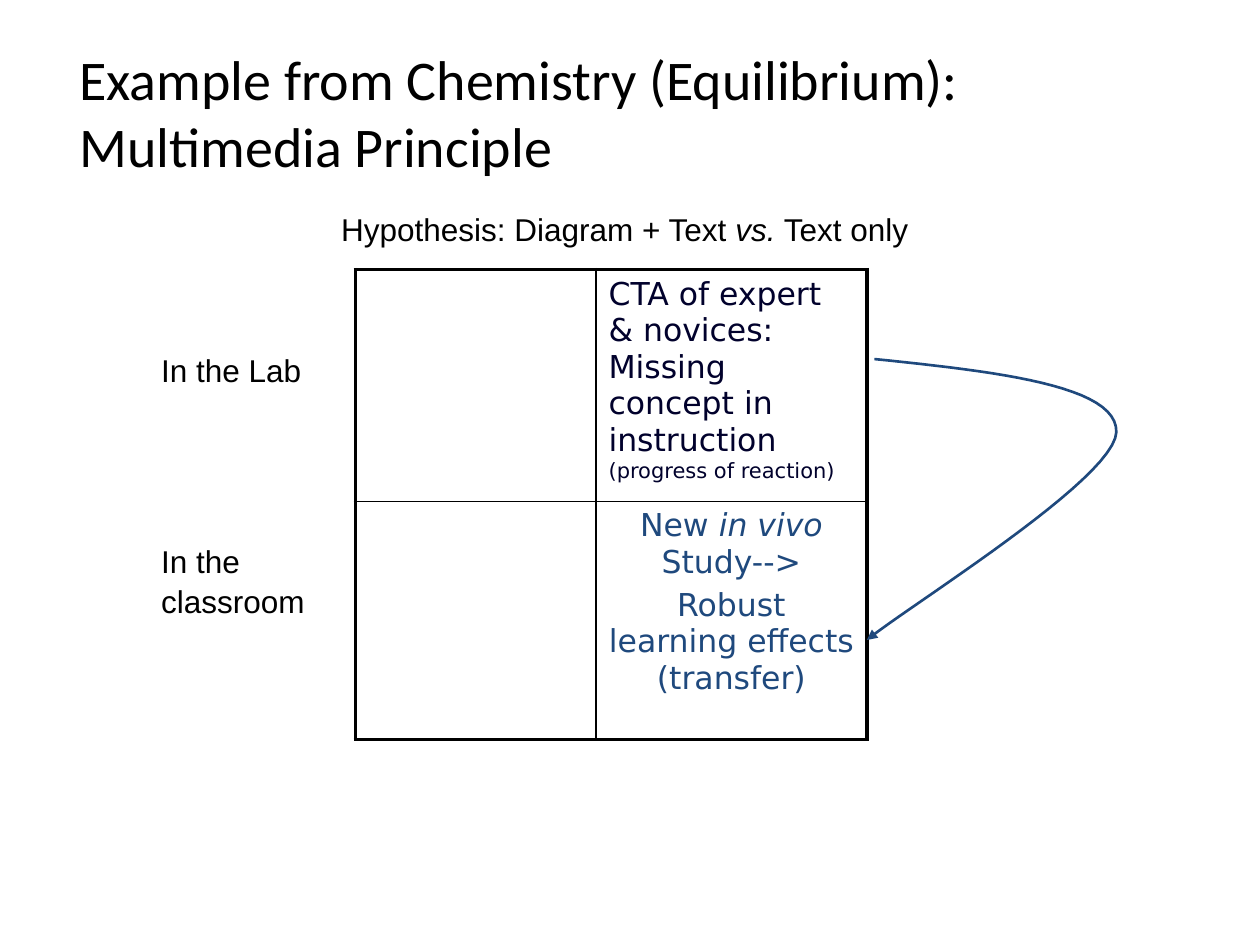
"""Build the slide on the multimedia principle in chemistry."""
from dataclasses import dataclass
from typing import NamedTuple

from lxml.etree import SubElement as Sub
from pptx import Presentation as Deck
from pptx.dml.color import RGBColor as Rgb
from pptx.enum.text import MSO_ANCHOR as Anchor, PP_ALIGN as Align
from pptx.oxml.ns import qn
from pptx.util import Inches, Pt


@dataclass(frozen=True)
class Theme:
    black: str = "000000"
    navy: str = "01012C"
    blue: str = "1F497D"
    head: str = "Calibri"
    body: str = "Arial"
    cell: str = "DejaVu Sans"
    big: float = 32
    mid: float = 18
    small: float = 12
    thick: float = 2.25
    thin: float = 1
    curve: float = 1.5


T = Theme()


class Run(NamedTuple):
    text: str
    size: float = T.mid
    slant: bool = False


class Para(NamedTuple):
    runs: list[Run]
    gap: float = 0
    align: Align = Align.LEFT
    lead: float = 1


class Note(NamedTuple):
    box: tuple[float, float, float, float]
    paras: list[Para]
    font: str = T.body
    anchor: Anchor = Anchor.TOP


class Cell(NamedTuple):
    row: int
    col: int
    color: str
    paras: list[Para]


class Spot(NamedTuple):
    x: float
    y: float


NOTES = [
    Note((0.53, 0.26, 9.11, 1.25),
         [Para([Run("Example from Chemistry (Equilibrium): \nMultimedia Principle", T.big)])],
         T.head, Anchor.MIDDLE),
    Note((1.18, 2.74, 1.72, 2.43),
         [Para([Run("In the Lab")]),
          Para([Run("In the classroom")], gap=86.5, lead=1.05)]),
    Note((2.61, 1.62, 5.32, 0.43),
         [Para([Run("Hypothesis: Diagram + Text "), Run("vs.", slant=True),
                Run(" Text only")])]),
]
GRID = (2.82, 2.14)
COLS = (1.91, 2.15)
ROWS = (1.84, 1.89)
GAP = T.mid * 0.2
CELLS = [
    Cell(0, 1, T.navy,
         [Para([Run("CTA of expert & novices: Missing concept in instruction "),
                Run("(progress of reaction)", T.small)], GAP)]),
    Cell(1, 1, T.blue,
         [Para([Run("New "), Run("in vivo", slant=True), Run(" Study-->")],
               GAP, Align.CENTER),
          Para([Run("Robust learning effects (transfer)")], GAP, Align.CENTER)]),
]
BENDS = [
    (Spot(6.94, 2.85), Spot(7.91, 2.95), Spot(8.87, 3.06), Spot(8.86, 3.43)),
    (Spot(8.86, 3.43), Spot(8.85, 3.8), Spot(7.21, 4.81), Spot(6.88, 5.08)),
]
STEPS = 24


def write(frame, paras: list[Para], font: str, color: str) -> None:
    for i, para in enumerate(paras):
        p = frame.add_paragraph() if i else frame.paragraphs[0]
        p.alignment = para.align
        p.space_before = Pt(para.gap)
        p.line_spacing = para.lead
        for run in para.runs:
            for n, line in enumerate(run.text.split("\n")):
                if n:
                    p.add_line_break()
                r = p.add_run()
                r.text = line
                r.font.name = font
                r.font.size = Pt(run.size)
                r.font.italic = run.slant
                r.font.color.rgb = Rgb.from_string(color)


def draw_note(slide, note: Note) -> None:
    frame = slide.shapes.add_textbox(*map(Inches, note.box)).text_frame
    frame.word_wrap = True
    frame.vertical_anchor = note.anchor
    write(frame, note.paras, note.font, T.black)


def edge(cell, side: str, width: float) -> None:
    line = Sub(cell._tc.get_or_add_tcPr(), qn(f"a:ln{side}"), w=str(Pt(width)))
    fill = Sub(line, qn("a:solidFill"))
    Sub(fill, qn("a:srgbClr"), val=T.black)


def draw_grid(slide) -> None:
    size = (sum(COLS), sum(ROWS))
    table = slide.shapes.add_table(
        len(ROWS), len(COLS), *map(Inches, GRID + size)).table
    table.first_row = table.horz_banding = False
    for col, width in zip(table.columns, COLS):
        col.width = Inches(width)
    for row, height in zip(table.rows, ROWS):
        row.height = Inches(height)
    for r in range(len(ROWS)):
        for c in range(len(COLS)):
            cell = table.cell(r, c)
            outer = {"L": c == 0, "R": c == len(COLS) - 1,
                     "T": r == 0, "B": r == len(ROWS) - 1}
            for side, rim in outer.items():
                edge(cell, side, T.thick if rim else T.thin)
            cell.fill.background()
    for item in CELLS:
        frame = table.cell(item.row, item.col).text_frame
        write(frame, item.paras, T.cell, item.color)


def bend(spots: tuple[Spot, ...], t: float) -> tuple[int, int]:
    u = 1 - t
    parts = (u ** 3, 3 * u * u * t, 3 * u * t * t, t ** 3)
    return (Inches(sum(k * s.x for k, s in zip(parts, spots))),
            Inches(sum(k * s.y for k, s in zip(parts, spots))))


def draw_curve(slide) -> None:
    dots = [bend(b, n / STEPS) for b in BENDS for n in range(1, STEPS + 1)]
    pen = slide.shapes.build_freeform(*bend(BENDS[0], 0))
    pen.add_line_segments(dots, close=False)
    shape = pen.convert_to_shape()
    shape.shadow.inherit = False
    shape.fill.background()
    shape.line.color.rgb = Rgb.from_string(T.blue)
    shape.line.width = Pt(T.curve)
    Sub(shape.line._get_or_add_ln(), qn("a:tailEnd"), type="triangle")


def main() -> None:
    deck = Deck()
    deck.slide_width, deck.slide_height = Inches(10), Inches(7.5)
    slide = deck.slides.add_slide(deck.slide_layouts[6])
    draw_grid(slide)
    for note in NOTES:
        draw_note(slide, note)
    draw_curve(slide)
    deck.save("out.pptx")


if __name__ == "__main__":
    main()
